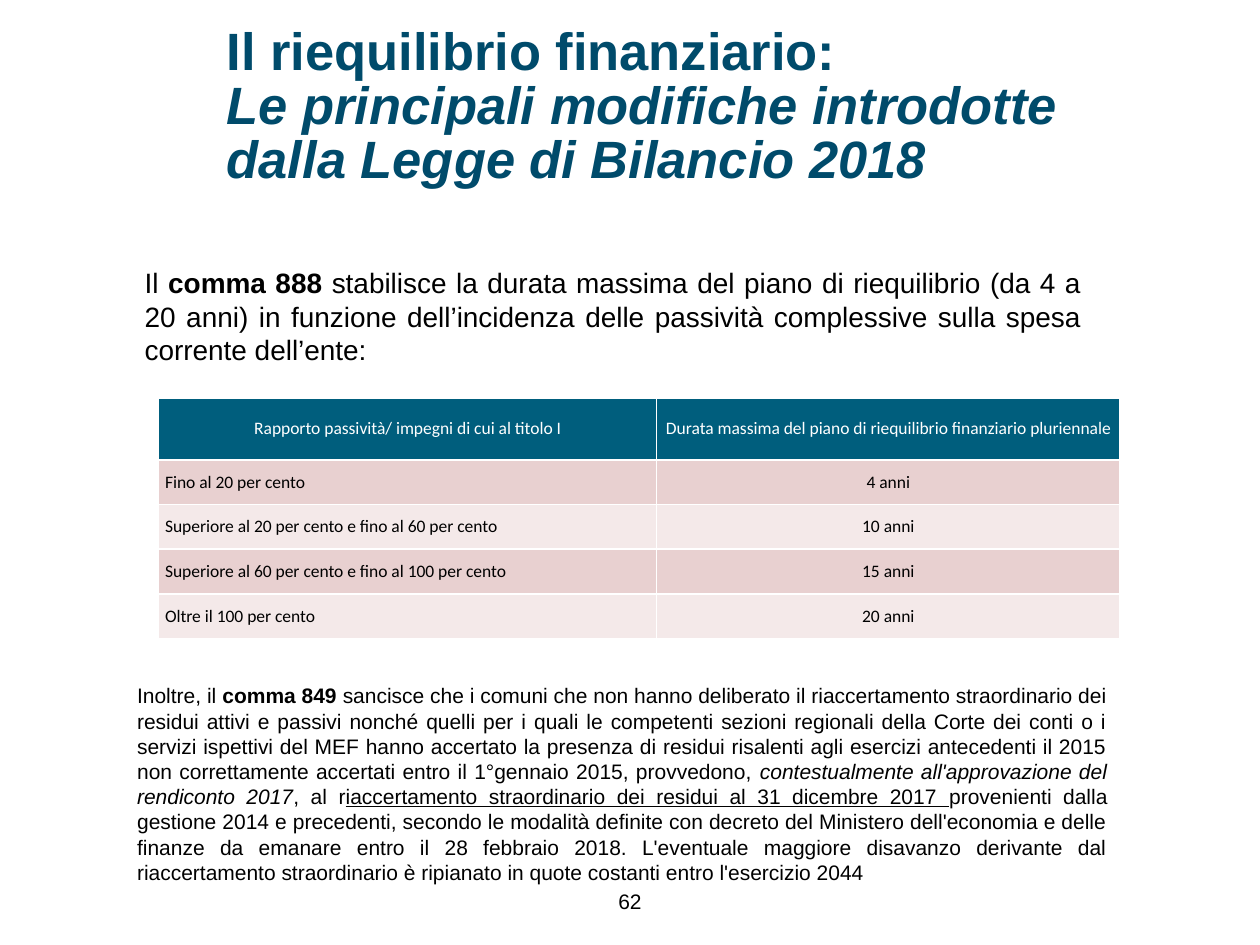
from lxml.etree import SubElement
from pptx import Presentation
from pptx.dml.color import RGBColor
from pptx.enum.text import MSO_ANCHOR, PP_ALIGN
from pptx.oxml.ns import qn
from pptx.util import Inches, Pt

BLUE = RGBColor(0x00, 0x4B, 0x6B)
HEADER = RGBColor(0x00, 0x5E, 0x7D)
BANDS = [RGBColor(0xE8, 0xD0, 0xD0), RGBColor(0xF4, 0xE9, 0xE9)]
BLACK = RGBColor(0, 0, 0)
WHITE = RGBColor(255, 255, 255)

BOLD, ITALIC, UNDERLINE = {"bold": True}, {"italic": True}, {"underline": True}

TITLE = [
    ("Il riequilibrio finanziario:\v", BOLD),
    ("Le principali modifiche introdotte dalla Legge di Bilancio 2018", {**BOLD, **ITALIC}),
]
INTRO = [
    ("Il ", {}),
    ("comma 888 ", BOLD),
    ("stabilisce la durata massima del piano di riequilibrio (da 4 a 20 anni) in funzione "
     "dell’incidenza delle passività complessive sulla spesa corrente dell’ente:", {}),
]
CLOSING = [
    ("Inoltre, il ", {}),
    ("comma 849 ", BOLD),
    ("sancisce che i comuni che non hanno deliberato il riaccertamento straordinario dei residui "
     "attivi e passivi nonché quelli per i quali le competenti sezioni regionali della Corte dei "
     "conti o i servizi ispettivi del MEF hanno accertato la presenza di residui risalenti agli "
     "esercizi antecedenti il 2015 non correttamente accertati entro il 1°gennaio 2015, "
     "provvedono, ", {}),
    ("contestualmente all'approvazione del rendiconto 2017", ITALIC),
    (", al r", {}),
    ("iaccertamento straordinario dei residui al 31 dicembre 2017 ", UNDERLINE),
    ("provenienti dalla gestione 2014 e precedenti, secondo le modalità definite con decreto del "
     "Ministero dell'economia e delle finanze da emanare entro il 28 febbraio 2018. L'eventuale "
     "maggiore disavanzo derivante dal riaccertamento straordinario è ripianato in quote costanti "
     "entro l'esercizio 2044", {}),
]
ROWS = [
    ("Rapporto passività/ impegni di cui al titolo I",
     "Durata massima del piano di riequilibrio finanziario pluriennale"),
    ("Fino al 20 per cento", "4 anni"),
    ("Superiore al 20 per cento e fino al 60 per cento", "10 anni"),
    ("Superiore al 60 per cento e fino al 100 per cento", "15 anni"),
    ("Oltre il 100 per cento", "20 anni"),
]
COLUMNS = [3.95, 3.68]
HEADER_HEIGHT, ROW_HEIGHT = 0.49, 0.355


def write(tf, runs, size, color, align, anchor=MSO_ANCHOR.TOP, font="Arial"):
    tf.word_wrap = True
    tf.vertical_anchor = anchor
    p = tf.paragraphs[0]
    p.alignment = align
    for text, style in runs:
        pieces = text.split("\v")
        for i, piece in enumerate(pieces):
            if i:
                p.add_line_break()
            if not piece:
                continue
            r = p.add_run()
            r.text = piece
            values = {"name": font, "size": Pt(size), "bold": False, "italic": False, **style}
            for name, value in values.items():
                setattr(r.font, name, value)
            r.font.color.rgb = color
    return p


def add_text(s, box, runs, size, align, anchor=MSO_ANCHOR.TOP):
    sp = s.shapes.add_textbox(*map(Inches, box))
    write(sp.text_frame, runs, size, BLACK, align, anchor)


def add_borders(cell):
    tc_pr = cell._tc.get_or_add_tcPr()
    for side in ("lnL", "lnR", "lnT", "lnB"):
        ln = SubElement(tc_pr, qn(f"a:{side}"), w=str(Pt(1)))
        fill = SubElement(ln, qn("a:solidFill"))
        SubElement(fill, qn("a:srgbClr"), val=str(WHITE))


def add_duration_table(s):
    height = HEADER_HEIGHT + ROW_HEIGHT * (len(ROWS) - 1)
    box = (1.26, 3.16, sum(COLUMNS), height)
    table = s.shapes.add_table(len(ROWS), len(COLUMNS), *map(Inches, box)).table
    for column, width in zip(table.columns, COLUMNS):
        column.width = Inches(width)
    for i, row in enumerate(ROWS):
        table.rows[i].height = Inches(ROW_HEIGHT if i else HEADER_HEIGHT)
        for j, text in enumerate(row):
            cell = table.cell(i, j)
            add_borders(cell)
            cell.fill.solid()
            cell.fill.fore_color.rgb = BANDS[(i - 1) % 2] if i else HEADER
            cell.margin_left = cell.margin_right = Inches(0.05)
            cell.margin_top = cell.margin_bottom = 0
            cell.vertical_anchor = MSO_ANCHOR.MIDDLE
            align = PP_ALIGN.LEFT if i and j == 0 else PP_ALIGN.CENTER
            write(cell.text_frame, [(text, {})], 10, BLACK if i else WHITE, align,
                  MSO_ANCHOR.MIDDLE, "Calibri")


def main():
    prs = Presentation()
    prs.slide_width, prs.slide_height = Inches(10), Inches(7.5)
    s = prs.slides.add_slide(prs.slide_layouts[5])

    title = s.shapes.title
    title.left, title.top, title.width, title.height = map(Inches, (1.7, 0.16, 7.45, 1.52))
    p = write(title.text_frame, TITLE, 30, BLUE, PP_ALIGN.LEFT)
    p.line_spacing = Pt(31)

    add_text(s, (1.05, 2.06, 7.63, 0.91), INTRO, 16, PP_ALIGN.JUSTIFY)
    add_duration_table(s)
    add_text(s, (0.99, 5.37, 7.9, 2.02), CLOSING, 12, PP_ALIGN.JUSTIFY)
    add_text(s, (4.35, 6.95, 1.3, 0.4), [("62", {})], 12, PP_ALIGN.CENTER, MSO_ANCHOR.MIDDLE)

    prs.save("out.pptx")


if __name__ == "__main__":
    main()
